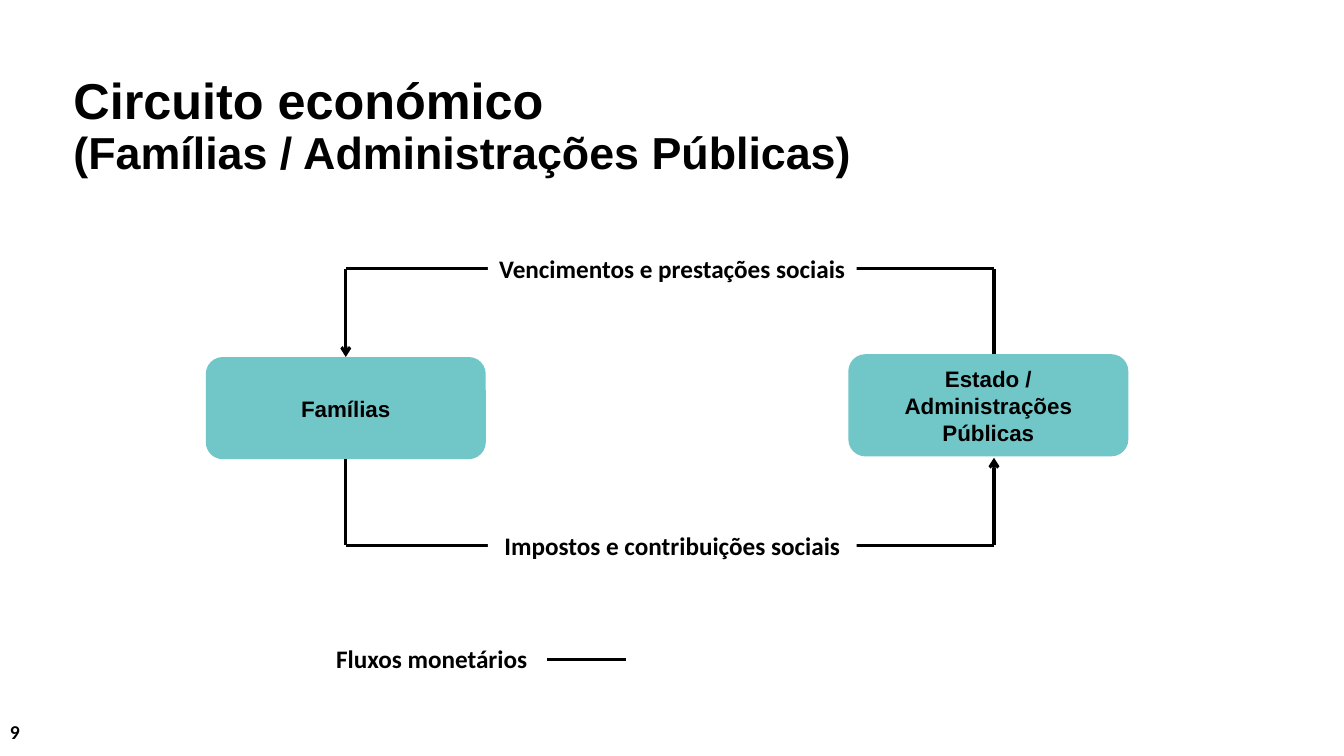
from lxml import etree
from pptx import Presentation
from pptx.dml.color import RGBColor
from pptx.enum.shapes import MSO_CONNECTOR, MSO_SHAPE
from pptx.enum.text import MSO_ANCHOR, PP_ALIGN
from pptx.oxml.ns import qn
from pptx.util import Pt

BLACK = RGBColor(0x00, 0x00, 0x00)
WHITE = RGBColor(0xFF, 0xFF, 0xFF)
TEAL = RGBColor(0x71, 0xC6, 0xC8)
ROUND, RECT = MSO_SHAPE.ROUNDED_RECTANGLE, MSO_SHAPE.RECTANGLE
STRAIGHT = MSO_CONNECTOR.STRAIGHT
LEFT, CENTER = PP_ALIGN.LEFT, PP_ALIGN.CENTER
TOP, MIDDLE = MSO_ANCHOR.TOP, MSO_ANCHOR.MIDDLE
SIDE_TOP, SIDE_BOTTOM = 0, 2


class Board:
    def __init__(self, slide):
        self.shapes = slide.shapes
        self.head, self.body = "Arial", "Calibri"
        self.ink, self.width = BLACK, Pt(2.25)

    def letter(self, shape, runs, font, align=LEFT, anchor=TOP, space=None):
        """Fill a shape with (text, size) runs, one per line."""
        frame = shape.text_frame
        frame.word_wrap = True
        frame.vertical_anchor = anchor
        para = frame.paragraphs[0]
        para.alignment = align
        if space:
            para.line_spacing = space
        for i, (text, size) in enumerate(runs):
            if i:
                para.add_line_break()
            run = para.add_run()
            run.text = text
            run.font.name, run.font.size = font, Pt(size)
            run.font.bold = True
            run.font.color.rgb = self.ink

    def text(self, box, runs, font, space=None):
        shape = self.shapes.add_textbox(*map(Pt, box))
        self.letter(shape, runs, font, space=space)

    def block(self, kind, box, fill):
        shape = self.shapes.add_shape(kind, *map(Pt, box))
        shape.shadow.inherit = False
        shape.fill.solid()
        shape.fill.fore_color.rgb = fill
        shape.line.fill.background()
        return shape

    def node(self, box, name):
        shape = self.block(ROUND, box, TEAL)
        self.letter(shape, [(name, 16)], self.head, CENTER, MIDDLE)
        return shape

    def label(self, box, name, align=CENTER):
        shape = self.block(RECT, box, WHITE)
        self.letter(shape, [(name, 18)], self.body, align)

    def line(self, start, end, arrow=False):
        wire = self.shapes.add_connector(STRAIGHT, *map(Pt, start + end))
        wire.line.color.rgb = self.ink
        wire.line.width = self.width
        props = wire._element.spPr
        if arrow:
            tip = etree.SubElement(props.find(qn("a:ln")), qn("a:tailEnd"))
            tip.set("type", "arrow")
        etree.SubElement(props, qn("a:effectLst"))
        return wire


def main():
    deck = Presentation()
    deck.slide_width, deck.slide_height = Pt(960), Pt(540)
    board = Board(deck.slides.add_slide(deck.slide_layouts[6]))

    board.text((45.4, 51, 881, 95),
               [("Circuito económico", 36),
                ("(Famílias / Administrações Públicas)", 32)],
               board.head, 0.9)
    board.text((0, 511, 216, 29), [("9", 14)], board.body)

    home = board.node((147, 255, 200, 73), "Famílias")
    board.node((606, 253, 200, 73), "Estado / Administrações Públicas")

    west, east, high, low = 247, 710, 192, 389.5
    flows = [(high, "Vencimentos e prestações sociais"),
             (low, "Impostos e contribuições sociais")]
    for y, name in flows:
        board.line((west, y), (east, y))
        board.label((348.5, y - 14.5, 263.5, 29), name)

    wire = board.line((west, high), (west, 255), arrow=True)
    wire.end_connect(home, SIDE_TOP)
    board.line((east, high), (east, 253))
    wire = board.line((west, 328), (west, low))
    wire.begin_connect(home, SIDE_BOTTOM)
    board.line((east, low), (east, 327), arrow=True)

    board.label((233, 456, 164, 29), "Fluxos monetários", LEFT)
    board.line((391, 471), (447, 471))
    deck.save("out.pptx")


if __name__ == "__main__":
    main()
